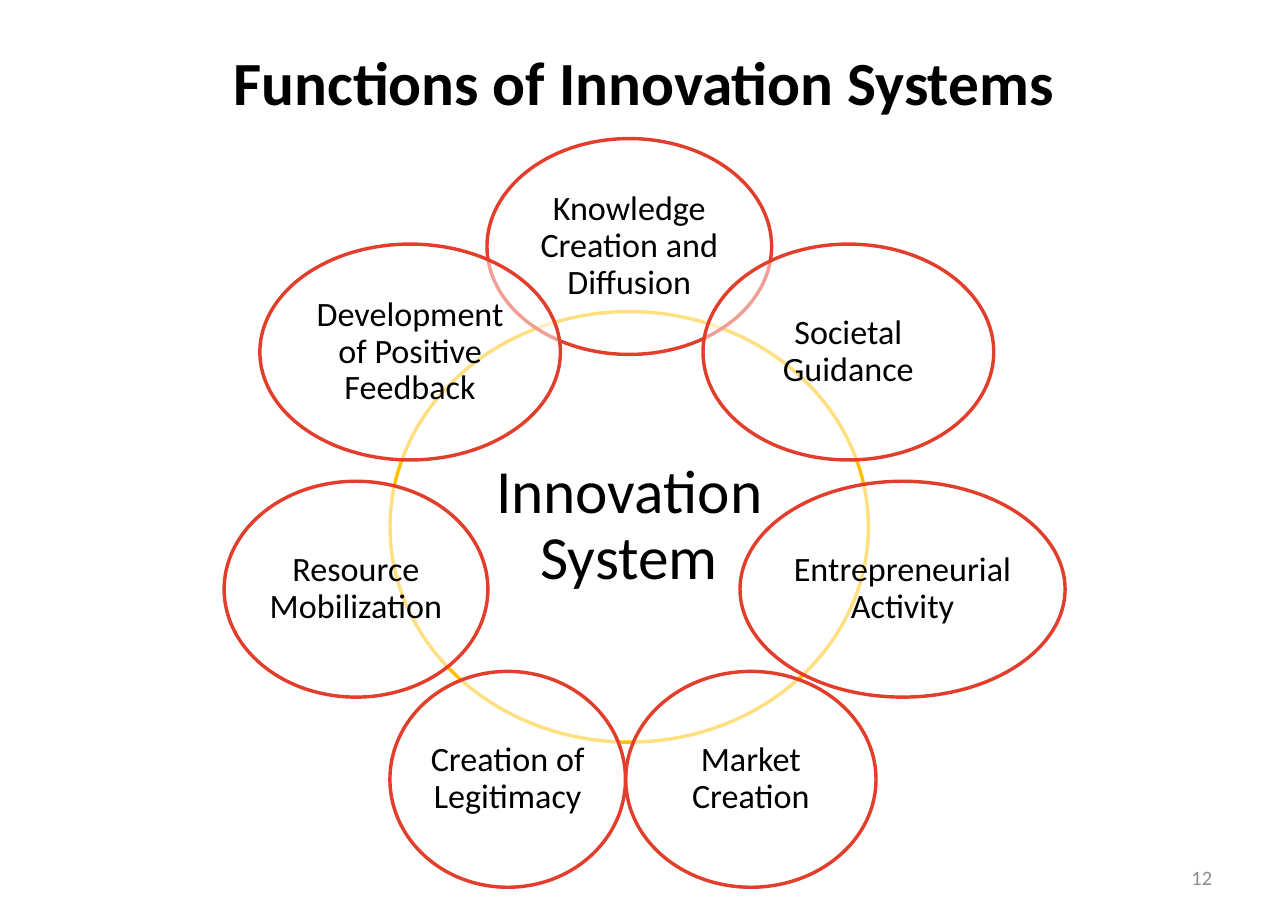
from dataclasses import dataclass
from math import cos, pi, sin

from pptx import Presentation
from pptx.dml.color import RGBColor
from pptx.enum.shapes import MSO_SHAPE
from pptx.enum.text import MSO_ANCHOR, PP_ALIGN
from pptx.oxml.ns import qn
from pptx.shapes.autoshape import Shape
from pptx.slide import Slide
from pptx.util import Inches, Pt
from lxml.etree import SubElement

COLUMNS, ROWS = 42, 30
SLIDE_WIDTH, SLIDE_HEIGHT = Inches(10.5), Inches(7.5)


@dataclass(frozen=True)
class Theme:
    font: str = "Calibri"
    ink: str = "000000"
    muted: str = "8C8C8C"
    paper: str = "FFFFFF"
    hub: str = "FFC000"
    function: str = "E33D2C"
    heading_size: int = 36
    function_size: int = 20
    number_size: int = 12
    outline: int = 2
    opacity: int = 50


@dataclass(frozen=True)
class Area:
    column: float
    row: float
    columns: float
    rows: float

    def emu(self) -> tuple[int, int, int, int]:
        return (
            round(SLIDE_WIDTH * self.column / COLUMNS),
            round(SLIDE_HEIGHT * self.row / ROWS),
            round(SLIDE_WIDTH * self.columns / COLUMNS),
            round(SLIDE_HEIGHT * self.rows / ROWS),
        )


@dataclass(frozen=True)
class Function:
    label: str
    columns: float


THEME = Theme()
CENTRE_COLUMN, CENTRE_ROW, RING_RADIUS = 20.52, 17.18, 9.14
HUB_COLUMNS, HUB_ROWS = 15.6, 14.04
FUNCTION_ROWS = 7.04
FUNCTIONS = (
    Function("Knowledge Creation and Diffusion", 9.28),
    Function("Societal Guidance", 9.48),
    Function("Entrepreneurial Activity", 10.6),
    Function("Market Creation", 8.16),
    Function("Creation of Legitimacy", 7.68),
    Function("Resource Mobilization", 8.6),
    Function("Development of Positive Feedback", 9.8),
)


def write(shape: Shape, text: str, *, size: int, color: str = THEME.ink,
          bold: bool = False, align: PP_ALIGN = PP_ALIGN.CENTER,
          spacing: float = 1.0, inset: float = 0.1) -> None:
    frame = shape.text_frame
    frame.word_wrap = True
    frame.vertical_anchor = MSO_ANCHOR.MIDDLE
    frame.margin_left = frame.margin_right = Inches(inset)
    frame.margin_top = frame.margin_bottom = Inches(min(inset, 0.05))
    paragraph = frame.paragraphs[0]
    paragraph.alignment = align
    paragraph.line_spacing = spacing
    run = paragraph.add_run()
    run.text = text
    run.font.name = THEME.font
    run.font.size = Pt(size)
    run.font.bold = bold
    run.font.color.rgb = RGBColor.from_string(color)


def add_circle(slide: Slide, label: str, column: float, row: float,
               columns: float, rows: float, *, outline: str, size: int,
               inset: float) -> None:
    area = Area(column - columns / 2, row - rows / 2, columns, rows)
    circle = slide.shapes.add_shape(MSO_SHAPE.OVAL, *area.emu())
    circle.shadow.inherit = False
    circle.fill.solid()
    circle.fill.fore_color.rgb = RGBColor.from_string(THEME.paper)
    paper = circle.fill._xPr.find(qn("a:solidFill"))[0]
    SubElement(paper, qn("a:alpha")).set("val", str(THEME.opacity * 1000))
    circle.line.color.rgb = RGBColor.from_string(outline)
    circle.line.width = Pt(THEME.outline)
    write(circle, label, size=size, spacing=0.9, inset=inset)


def add_ring(slide: Slide) -> None:
    add_circle(slide, "Innovation System", CENTRE_COLUMN, CENTRE_ROW,
               HUB_COLUMNS, HUB_ROWS, outline=THEME.hub,
               size=THEME.heading_size, inset=0.05)
    for position, function in enumerate(FUNCTIONS):
        angle = 2 * pi * position / len(FUNCTIONS)
        add_circle(slide, function.label,
                   CENTRE_COLUMN + RING_RADIUS * sin(angle),
                   CENTRE_ROW - RING_RADIUS * cos(angle),
                   function.columns, FUNCTION_ROWS, outline=THEME.function,
                   size=THEME.function_size, inset=0.03)


def main() -> None:
    deck = Presentation()
    deck.slide_width, deck.slide_height = SLIDE_WIDTH, SLIDE_HEIGHT
    slide = deck.slides.add_slide(deck.slide_layouts[6])
    heading = slide.shapes.add_textbox(*Area(3, 1.2, 36, 2.88).emu())
    write(heading, "Functions of Innovation Systems",
          size=THEME.heading_size, bold=True)
    page_number = slide.shapes.add_textbox(*Area(30.12, 27.8, 9.8, 1.6).emu())
    write(page_number, "12", size=THEME.number_size, color=THEME.muted,
          align=PP_ALIGN.RIGHT)
    add_ring(slide)
    deck.save("out.pptx")


if __name__ == "__main__":
    main()
